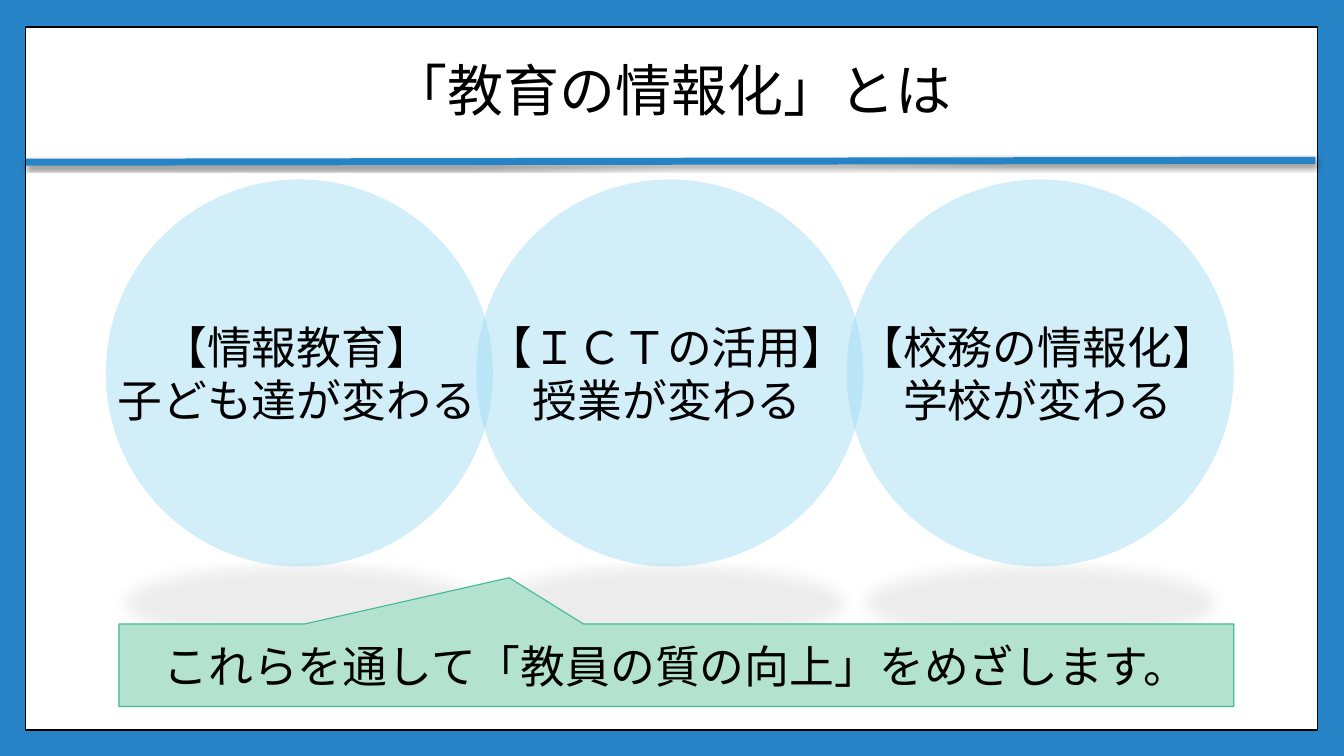
from dataclasses import dataclass

from lxml.etree import SubElement
from pptx import Presentation
from pptx.dml.color import RGBColor
from pptx.enum.shapes import MSO_CONNECTOR as Connector, MSO_SHAPE as Shape
from pptx.enum.text import MSO_ANCHOR as Anchor, MSO_AUTO_SIZE as AutoSize, PP_ALIGN as Align
from pptx.oxml.ns import qn
from pptx.util import Pt


@dataclass(frozen=True)
class Theme:
    blue: str = "2683C6"
    white: str = "FFFFFF"
    black: str = "000000"
    circle: str = "A4DEF4"
    callout: str = "B3E2D0"
    callout_edge: str = "42BA97"
    title_font: str = "Roboto"
    body_font: str = "Arial"
    title_size: float = 40
    body_size: float = 32


THEME = Theme()

TOPICS = [
    ("【情報教育】", "子ども達が変わる"),
    ("【ＩＣＴの活用】", "授業が変わる"),
    ("【校務の情報化】", "学校が変わる"),
]


def rgb(value):
    return RGBColor.from_string(value)


def add_paragraph(tf, text, *, first=True, font=THEME.body_font, size=THEME.body_size,
                  color=THEME.black, align=Align.CENTER, spacing=None):
    p = tf.paragraphs[0] if first else tf.add_paragraph()
    p.alignment = align
    p.line_spacing = spacing
    r = p.add_run()
    r.text = text
    r.font.name = font
    r.font.size = Pt(size)
    r.font.color.rgb = rgb(color)


def set_alpha(color_element, percent):
    SubElement(color_element, qn("a:alpha"), val=str(percent * 1000))


def add_shadow(effects, percent, blur, distance, **options):
    shadow = SubElement(effects, qn("a:outerShdw"), blurRad=str(Pt(blur)),
                        dist=str(Pt(distance)), dir="5400000", rotWithShape="0", **options)
    set_alpha(SubElement(shadow, qn("a:srgbClr"), val=THEME.black), percent)


def add_box(s, kind, left, top, width, height, fill, line=None, line_width=1):
    sp = s.shapes.add_shape(kind, Pt(left), Pt(top), Pt(width), Pt(height))
    sp.fill.solid()
    sp.fill.fore_color.rgb = rgb(fill)
    if line:
        sp.line.color.rgb = rgb(line)
        sp.line.width = Pt(line_width)
    else:
        sp.line.fill.background()
    sp.shadow.inherit = False
    return sp


def add_divider(s):
    line = s.shapes.add_connector(Connector.STRAIGHT, Pt(18.7), Pt(115.9), Pt(939.6), Pt(114.5))
    line.line.color.rgb = rgb(THEME.blue)
    line.line.width = Pt(5)
    effects = SubElement(line.element.spPr, qn("a:effectLst"))
    add_shadow(effects, 45, 3, 2)


def format_title(s, text):
    title = s.shapes.title
    title.left, title.top, title.width, title.height = Pt(18.7), Pt(25.9), Pt(921.6), Pt(82)
    tf = title.text_frame
    tf.vertical_anchor = Anchor.MIDDLE
    add_paragraph(tf, text, font=THEME.title_font, size=THEME.title_size, spacing=0.9)
    title.element.getparent().append(title.element)


def add_topic(s, left, lines):
    circle = add_box(s, Shape.OVAL, left, 128.2, 276.5, 276.5, THEME.circle)
    sp_pr = circle.element.spPr
    set_alpha(sp_pr.find(qn("a:solidFill"))[0], 50)
    add_shadow(sp_pr.find(qn("a:effectLst")), 15, 12, 0, sx="90000", sy="-19000", algn="b")

    label = s.shapes.add_textbox(Pt(left), Pt(224.6), Pt(272.9), Pt(85))
    tf = label.text_frame
    tf.word_wrap = False
    tf.auto_size = AutoSize.SHAPE_TO_FIT_TEXT
    for i, text in enumerate(lines):
        add_paragraph(tf, text, first=i == 0)


def add_callout(s, text):
    sp = add_box(s, Shape.RECTANGULAR_CALLOUT, 85, 445.7, 796.3, 59,
                 THEME.callout, THEME.callout_edge, 0.79)
    sp.adjustments[0] = -0.15
    sp.adjustments[1] = -1.06
    tf = sp.text_frame
    tf.word_wrap = True
    tf.vertical_anchor = Anchor.MIDDLE
    add_paragraph(tf, text)


def main():
    prs = Presentation()
    prs.slide_width, prs.slide_height = Pt(960), Pt(540)
    s = prs.slides.add_slide(prs.slide_layouts[5])
    s.background.fill.solid()
    s.background.fill.fore_color.rgb = rgb(THEME.blue)

    add_box(s, Shape.RECTANGLE, 18.2, 19.4, 923, 502, THEME.white, THEME.black)
    add_divider(s)
    format_title(s, "「教育の情報化」とは")
    for i, lines in enumerate(TOPICS):
        add_topic(s, 75.6 + 264.6 * i, lines)
    add_callout(s, "これらを通して「教員の質の向上」をめざします。")
    prs.save("out.pptx")


if __name__ == "__main__":
    main()
